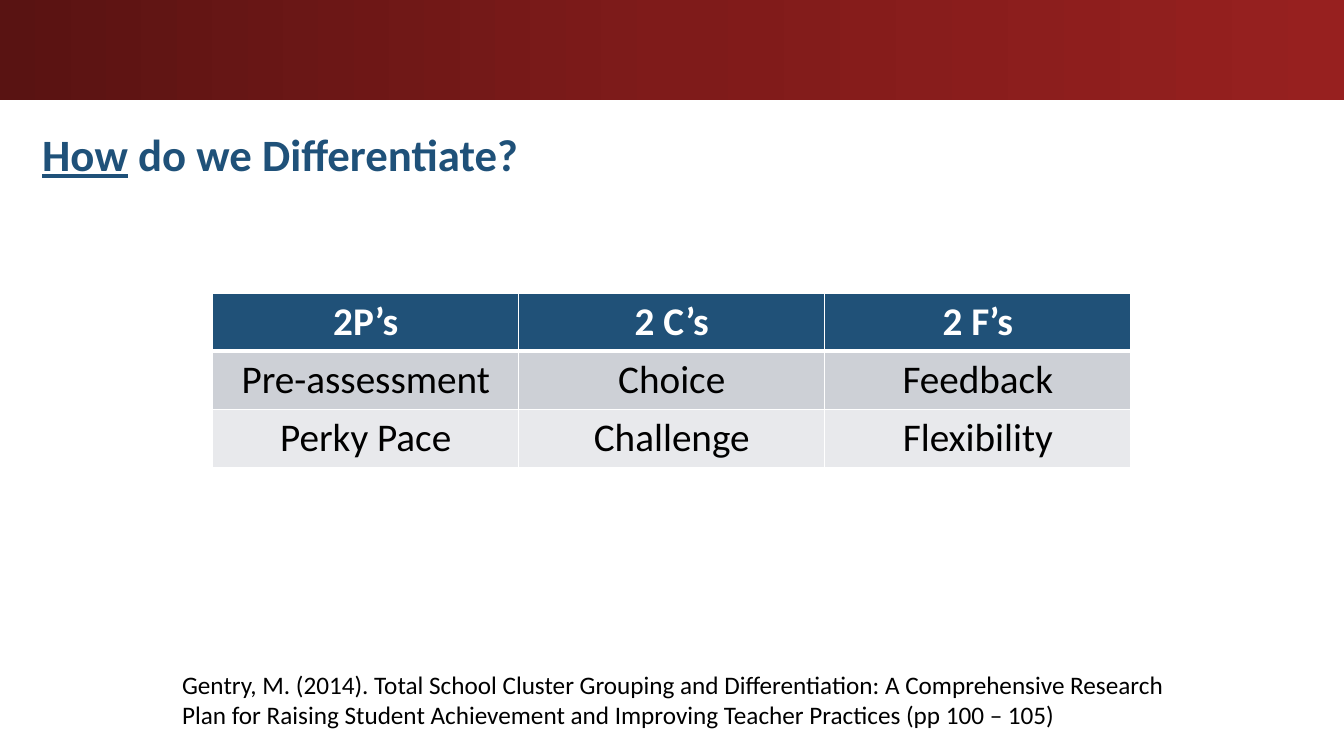
from copy import deepcopy
from dataclasses import dataclass

from lxml.etree import SubElement
from pptx import Presentation
from pptx.dml.color import RGBColor
from pptx.enum.shapes import MSO_SHAPE
from pptx.enum.text import MSO_ANCHOR, MSO_AUTO_SIZE, PP_ALIGN
from pptx.oxml.ns import qn
from pptx.util import Cm, Pt


@dataclass(frozen=True)
class Theme:
    """Colours, font and type sizes of the slide."""
    font: str = "Calibri"
    title: str = "1F5179"
    header: str = "205178"
    bands: tuple = ("CDD0D6", "E8E9EC")
    banner: tuple = ("591312", "7F1B1A", "97201F")
    text: str = "000000"
    light: str = "FFFFFF"
    title_size: int = 32
    table_size: int = 28
    cite_size: int = 18


THEME = Theme()
ROWS = [
    ["2P’s", "2 C’s", "2 F’s"],
    ["Pre-assessment", "Choice", "Feedback"],
    ["Perky Pace", "Challenge", "Flexibility"],
]
CITATION = (
    "Gentry, M. (2014). Total School Cluster Grouping and Differentiation: "
    "A Comprehensive Research Plan for Raising Student Achievement and "
    "Improving Teacher Practices (pp 100 – 105)"
)


def add_run(p, text, size, color, **formats):
    """Append a formatted run to a paragraph."""
    r = p.add_run()
    r.text = text
    formats = {"name": THEME.font, "size": Pt(size), "bold": False, **formats}
    for name, value in formats.items():
        setattr(r.font, name, value)
    r.font.color.rgb = RGBColor.from_string(color)


def place(sp, box):
    """Move and size a shape to a box in centimetres."""
    for name, value in zip(("left", "top", "width", "height"), box):
        setattr(sp, name, Cm(value))


def add_banner(s, box):
    """Draw the gradient band across the top."""
    sp = s.shapes.add_shape(MSO_SHAPE.RECTANGLE, *map(Cm, box))
    sp.shadow.inherit = False
    sp.line.fill.background()
    sp.fill.gradient()
    sp.fill.gradient_angle = 0
    first = sp._element.spPr.find(".//" + qn("a:gs"))
    first.addnext(deepcopy(first))
    stops = list(sp.fill.gradient_stops)
    for i, (stop, color) in enumerate(zip(stops, THEME.banner)):
        stop.position = i / (len(stops) - 1)
        stop.color.rgb = RGBColor.from_string(color)


def add_title(s, box):
    """Fill the title placeholder."""
    sp = s.shapes.title
    place(sp, box)
    tf = sp.text_frame
    formats = {"word_wrap": True, "auto_size": MSO_AUTO_SIZE.NONE,
               "vertical_anchor": MSO_ANCHOR.MIDDLE}
    for name, value in formats.items():
        setattr(tf, name, value)
    p = tf.paragraphs[0]
    p.alignment = PP_ALIGN.LEFT
    add_run(p, "How", THEME.title_size, THEME.title, bold=True, underline=True)
    add_run(p, " do we Differentiate?", THEME.title_size, THEME.title, bold=True)


def add_borders(cell, bottom):
    """Give a cell light borders with the given bottom width in points."""
    tcPr = cell._tc.get_or_add_tcPr()
    for side, width in {"L": 1, "R": 1, "T": 1, "B": bottom}.items():
        ln = SubElement(tcPr, qn(f"a:ln{side}"), w=str(Pt(width)))
        fill = SubElement(ln, qn("a:solidFill"))
        SubElement(fill, qn("a:srgbClr"), val=THEME.light)


def add_strategies(s, box):
    """Place the strategy table in equal rows and columns."""
    table = s.shapes.add_table(len(ROWS), len(ROWS[0]), *map(Cm, box)).table
    table.horz_banding = False
    for i, row in enumerate(ROWS):
        head = i == 0
        fill = THEME.header if head else THEME.bands[(i - 1) % 2]
        color = THEME.light if head else THEME.text
        for j, text in enumerate(row):
            cell = table.cell(i, j)
            add_borders(cell, 3 if head else 1)
            cell.fill.solid()
            cell.fill.fore_color.rgb = RGBColor.from_string(fill)
            p = cell.text_frame.paragraphs[0]
            p.alignment = PP_ALIGN.CENTER
            add_run(p, text, THEME.table_size, color, bold=head)


def add_citation(s, box):
    """Place the source reference at the foot."""
    tf = s.shapes.add_textbox(*map(Cm, box)).text_frame
    tf.word_wrap = True
    add_run(tf.paragraphs[0], CITATION, THEME.cite_size, THEME.text)


def main():
    """Build and save the slide."""
    prs = Presentation()
    prs.slide_width, prs.slide_height = Cm(33.87), Cm(19.05)
    s = prs.slides.add_slide(prs.slide_layouts[5])
    add_title(s, (0.81, 3.05, 28.83, 1.63))
    add_strategies(s, (5.36, 7.39, 23.14, 4.37))
    add_citation(s, (4.34, 16.74, 25.27, 1.8))
    add_banner(s, (0, 0, 33.87, 2.51))
    prs.save("out.pptx")


if __name__ == "__main__":
    main()
